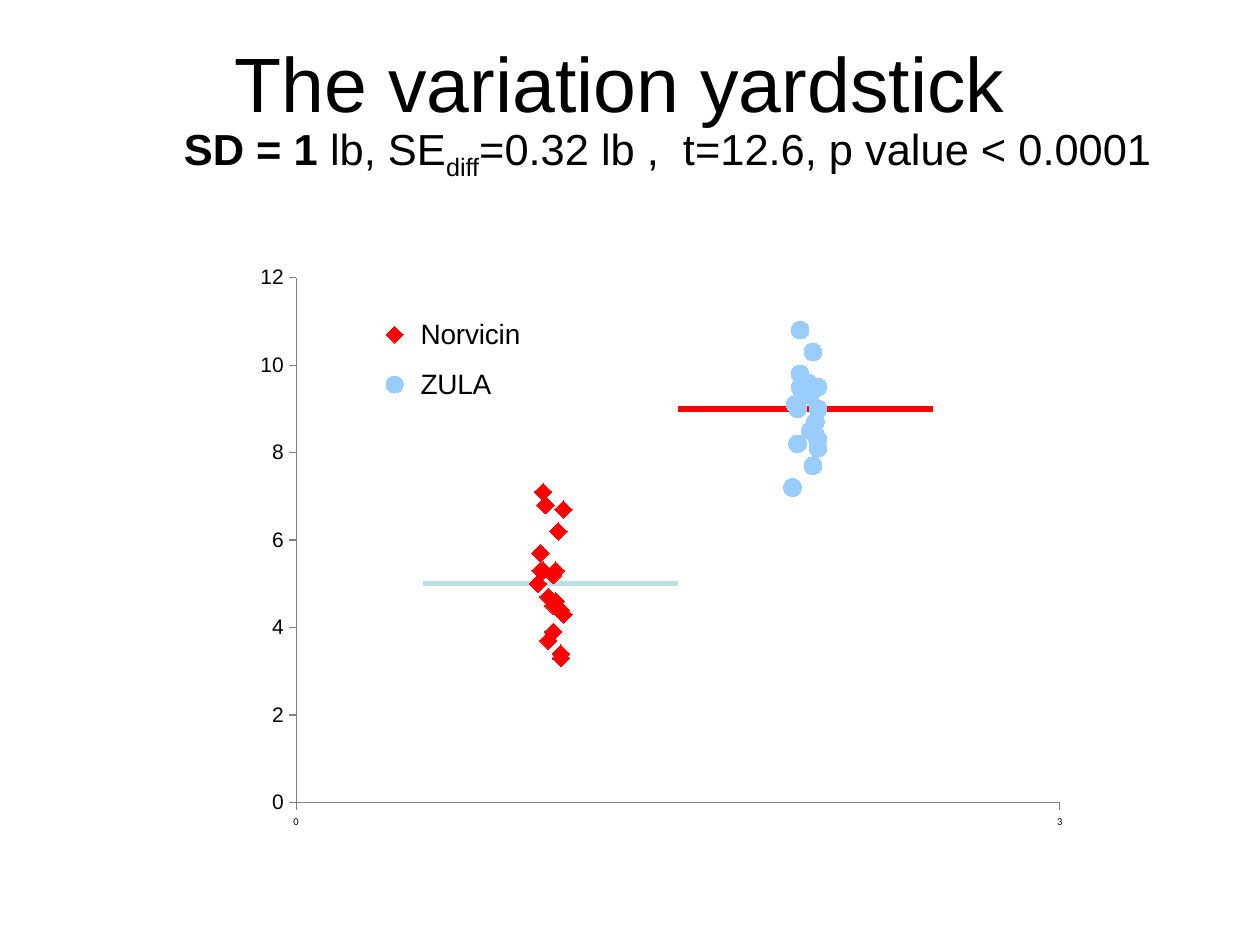
from lxml import etree
from pptx import Presentation
from pptx import util as u
from pptx.chart.data import XyChartData
from pptx.dml.color import RGBColor
from pptx.enum import chart as ch, text
from pptx.oxml.ns import qn

COLORS = {"ink": "000000", "axis": "808080", "red": "FF0000",
          "blue": "99CCFF", "pale": "BBE0E3"}

# Points of the two groups, as x and y
GROUP_A = list(zip(
    [1.01, 0.96, 0.96, 0.99, 1.04, 1.02, 1.01, 0.98, 1.01, 0.95,
     1.03, 1.05, 1.04, 0.97, 1.02, 1.05, 0.99, 0.97, 1.04, 0.97],
    [4.5, 5.3, 5.7, 3.7, 3.3, 5.3, 3.9, 6.8, 5.2, 5,
     6.2, 6.7, 3.4, 5.3, 4.6, 4.3, 4.7, 7.1, 4.4, 5.3]))
GROUP_B = list(zip(
    [2.05, 1.97, 1.95, 2.04, 1.97, 1.99, 2.03, 2.05, 2.04, 2.05,
     2.03, 1.98, 2.02, 2.01, 2.04, 1.96, 2.05, 2.02, 1.98, 1.98],
    [9.5, 9, 7.2, 8.7, 8.2, 9.3, 7.7, 8.1, 9.5, 8.3,
     10.3, 10.8, 8.5, 9.6, 8.4, 9.1, 9, 9.3, 9.8, 9.5]))

# name, points, marker style (None for a level line), colour
SERIES = [
    ("Norvicin", GROUP_A, ch.XL_MARKER_STYLE.DIAMOND, "red"),
    ("ZULA", GROUP_B, ch.XL_MARKER_STYLE.CIRCLE, "blue"),
    ("Series 3", [(0.5, 5), (1.5, 5)], None, "pale"),
    ("Series 4", [(1.5, 9), (2.5, 9)], None, "red"),
]


def rgb(name):
    return RGBColor.from_string(COLORS[name])


def set_font(font, size, name="Arial", color="ink", bold=None):
    font.size, font.name, font.bold = u.Pt(size), name, bold
    font.color.rgb = rgb(color)


def add_run(p, words, size, bold=False, baseline=None):
    r = p.add_run()
    r.text = words
    set_font(r.font, size, bold=bold)
    if baseline:
        r.font._element.set("baseline", str(baseline))


def set_layout(parent, index, x, y, w, h, inner=False):
    """Give a plot area or legend a manual place, as fractions of the chart."""
    for old in parent.findall(qn("c:layout")):
        parent.remove(old)
    layout = etree.Element(qn("c:layout"))
    manual = etree.SubElement(layout, qn("c:manualLayout"))
    items = [("layoutTarget", "inner")] if inner else []
    items += [("xMode", "edge"), ("yMode", "edge"),
              ("x", x), ("y", y), ("w", w), ("h", h)]
    for tag, val in items:
        etree.SubElement(manual, qn("c:" + tag)).set("val", str(val))
    parent.insert(index, layout)


class Deck:
    def __init__(self, width, height):
        self.prs = Presentation()
        self.prs.slide_width, self.prs.slide_height = u.Inches(width), u.Inches(height)
        self.s = self.prs.slides.add_slide(self.prs.slide_layouts[6])

    def text(self, box, runs, align=text.PP_ALIGN.LEFT,
             anchor=text.MSO_ANCHOR.TOP, indent=0):
        sp = self.s.shapes.add_textbox(*map(u.Inches, box))
        tf = sp.text_frame
        tf.word_wrap, tf.vertical_anchor = True, anchor
        tf.margin_left = u.Inches(0.1 + indent)
        p = tf.paragraphs[0]
        p.alignment = align
        for words, fmt in runs:
            add_run(p, words, **fmt)

    def scatter(self, box, series):
        data = XyChartData()
        for name, points, _, _ in series:
            xy = data.add_series(name)
            for x, y in points:
                xy.add_data_point(x, y)
        chart = self.s.shapes.add_chart(
            ch.XL_CHART_TYPE.XY_SCATTER, *map(u.Inches, box), data).chart
        chart.has_title = False
        set_font(chart.font, 8)
        chart.plots[0].vary_by_categories = False
        set_layout(chart._chartSpace.chart.plotArea, 0,
                   0.116, 0.075, 0.827, 0.833, inner=True)
        for plotted, (_, _, marker, color) in zip(chart.plots[0].series, series):
            self.style_series(plotted, marker, color)
        self.axis(chart.category_axis, 3, 3, 6, "Calibri")
        self.axis(chart.value_axis, 12, 2, 12, "Arial")
        self.legend(chart, [i for i, row in enumerate(series) if row[2] is None])

    def style_series(self, series, marker, color):
        if marker is None:
            series.marker.style = ch.XL_MARKER_STYLE.NONE
            series.format.line.width = u.Pt(3)
            series.format.line.color.rgb = rgb(color)
            return
        series.format.line.fill.background()
        series.marker.style, series.marker.size = marker, 10
        fmt = series.marker.format
        fmt.fill.solid()
        fmt.fill.fore_color.rgb = rgb(color)
        fmt.line.color.rgb = rgb(color)

    def axis(self, axis, top, step, size, font):
        axis.minimum_scale, axis.maximum_scale, axis.major_unit = 0, top, step
        axis.has_major_gridlines = False
        axis.major_tick_mark = ch.XL_TICK_MARK.OUTSIDE
        axis.minor_tick_mark = ch.XL_TICK_MARK.NONE
        axis.tick_labels.number_format = "#,##0"
        axis.tick_labels.number_format_is_linked = False
        axis.format.line.color.rgb = rgb("axis")
        set_font(axis.tick_labels.font, size, font)

    def legend(self, chart, hidden):
        chart.has_legend = True
        legend = chart.legend
        legend.position = ch.XL_LEGEND_POSITION.RIGHT
        legend.include_in_layout = False
        set_font(legend.font, 16)
        for n, idx in enumerate(hidden):
            entry = etree.Element(qn("c:legendEntry"))
            etree.SubElement(entry, qn("c:idx")).set("val", str(idx))
            etree.SubElement(entry, qn("c:delete")).set("val", "1")
            legend._element.insert(1 + n, entry)
        set_layout(legend._element, 1 + len(hidden), 0.18, 0.11, 0.2, 0.19)


def main():
    deck = Deck(10, 7.5)

    # Title
    deck.text((0.42, 0.17, 9, 0.95), [("The variation yardstick", {"size": 44})],
              align=text.PP_ALIGN.CENTER, anchor=text.MSO_ANCHOR.MIDDLE)

    # Line of figures under the title
    body = {"size": 24.8}
    deck.text((0.5, 0.92, 9.17, 0.75), [
        ("SD = 1 ", {**body, "bold": True}),
        ("lb, SE", body),
        ("diff", {**body, "baseline": -25000}),
        ("=0.32 lb ,  t=12.6, p value < 0.0001", body),
    ], indent=0.86)

    # Scatter chart with level lines
    deck.scatter((1.5, 1.83, 7.33, 5), SERIES)
    deck.prs.save("out.pptx")


if __name__ == "__main__":
    main()
